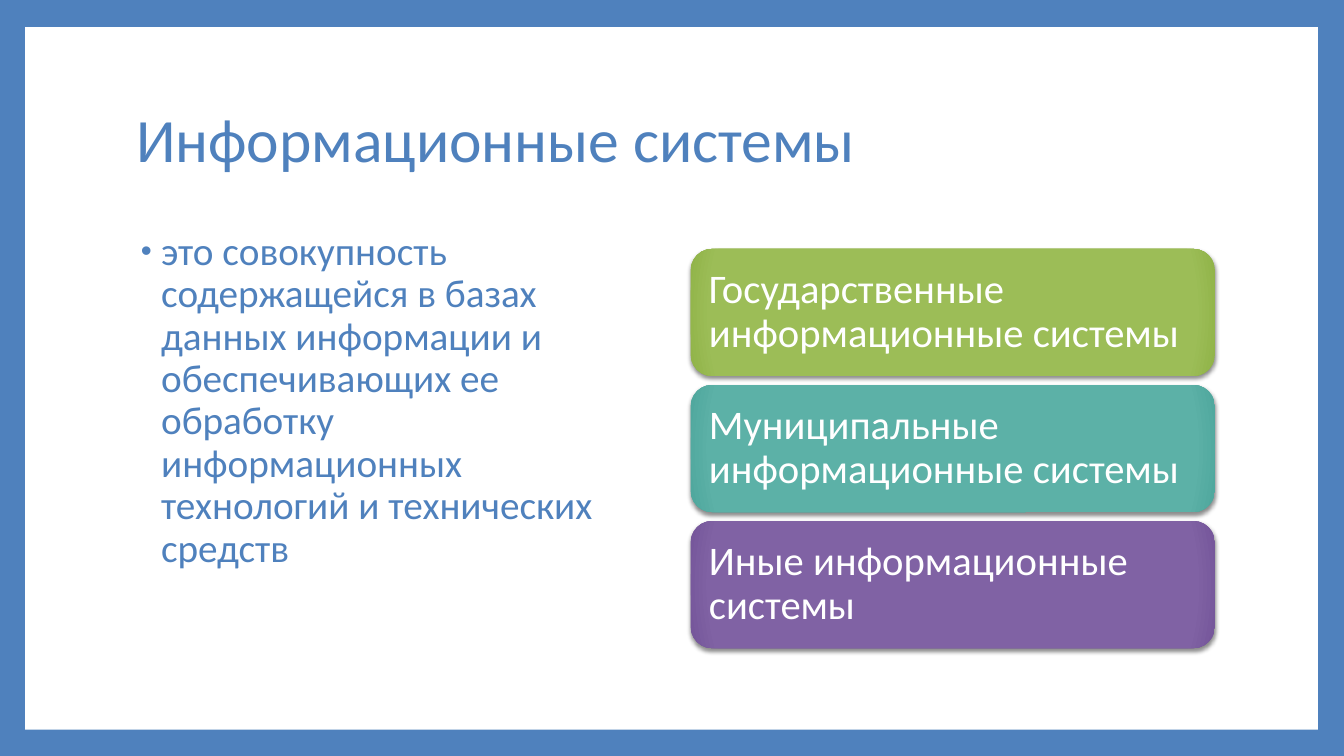
from lxml import etree
from pptx import Presentation
from pptx.dml.color import RGBColor
from pptx.enum.shapes import MSO_SHAPE
from pptx.enum.text import MSO_ANCHOR, PP_ALIGN
from pptx.oxml import parse_xml
from pptx.oxml.ns import nsdecls, qn
from pptx.util import Inches, Pt

RECTANGLE = MSO_SHAPE.RECTANGLE
ROUNDED = MSO_SHAPE.ROUNDED_RECTANGLE
MIDDLE, TOP = MSO_ANCHOR.MIDDLE, MSO_ANCHOR.TOP
LEFT = PP_ALIGN.LEFT

COLORS = {"blue": "4F81BD", "white": "FFFFFF", "shadow": "000000"}
FONT = "Calibri"

TITLE = "Информационные системы"
DEFINITION = (
    "это совокупность содержащейся в базах данных информации и обеспечивающих "
    "ее обработку информационных технологий и технических средств"
)
# Label, then gradient colours at 0, 90 and 100 percent
SYSTEM_TYPES = [
    ("Государственные информационные системы", ("9BBB59", "9CBD57", "90B348")),
    ("Муниципальные информационные системы", ("5EAFA6", "5CB1A7", "4EA69C")),
    ("Иные информационные системы", ("8064A2", "8062A4", "745599")),
]
GRADIENT_STOPS = (0, 90, 100)

CARD_LEFT, CARD_TOP = 6.85, 2.47
CARD_WIDTH, CARD_HEIGHT = 5.2, 1.26
CARD_STEP = 1.35


def write(shape, text, size, color, anchor=MIDDLE, before=0, inset=(0.1, 0.05)):
    frame = shape.text_frame
    frame.word_wrap = True
    frame.vertical_anchor = anchor
    frame.margin_left = frame.margin_right = Inches(inset[0])
    frame.margin_top = frame.margin_bottom = Inches(inset[1])
    para = frame.paragraphs[0]
    para.alignment = LEFT
    para.line_spacing = 0.9
    para.space_before = Pt(before)
    span = para.add_run()
    span.text = text
    span.font.name = FONT
    span.font.size = Pt(size)
    span.font.color.rgb = RGBColor.from_string(COLORS[color])
    return para


def add_bullet(para):
    properties = para._p.get_or_add_pPr()
    properties.set("marL", str(Inches(0.25)))
    properties.set("indent", str(Inches(-0.2)))
    color = etree.SubElement(properties, qn("a:buClr"))
    etree.SubElement(color, qn("a:srgbClr"), val=COLORS["blue"])
    etree.SubElement(properties, qn("a:buSzPct"), val="80000")
    etree.SubElement(properties, qn("a:buFont"), typeface="Arial")
    etree.SubElement(properties, qn("a:buChar"), char="•")


def style_card(card, colors):
    """Give the card a circular gradient, no outline and a soft drop shadow."""
    card.line.fill.background()
    stops = "".join(
        f'<a:gs pos="{stop * 1000}"><a:srgbClr val="{color}"/></a:gs>'
        for stop, color in zip(GRADIENT_STOPS, colors)
    )
    gradient = parse_xml(
        f'<a:gradFill {nsdecls("a")} rotWithShape="1"><a:gsLst>{stops}</a:gsLst>'
        '<a:path path="circle"><a:fillToRect l="100000" t="100000" '
        'r="100000" b="100000"/></a:path></a:gradFill>'
    )
    shadow = parse_xml(
        f'<a:effectLst {nsdecls("a")}><a:outerShdw blurRad="{Pt(3)}" '
        f'dist="{Pt(2)}" dir="5400000" rotWithShape="0">'
        f'<a:srgbClr val="{COLORS["shadow"]}"><a:alpha val="45000"/></a:srgbClr>'
        "</a:outerShdw></a:effectLst>"
    )
    properties = card._element.spPr
    properties.find(qn("a:prstGeom")).addnext(gradient)
    properties.append(shadow)


def main():
    deck = Presentation()
    deck.slide_width, deck.slide_height = Inches(13.33), Inches(7.5)
    slide = deck.slides.add_slide(deck.slide_layouts[5])
    background = slide.background.fill
    background.solid()
    background.fore_color.rgb = RGBColor.from_string(COLORS["blue"])

    title = slide.shapes.title
    title.left, title.top = Inches(1.25), Inches(0.67)
    title.width, title.height = Inches(10.8), Inches(1.48)
    write(title, TITLE, 44, "blue")

    panel = slide.shapes.add_shape(
        RECTANGLE, Inches(0.25), Inches(0.27), Inches(12.82), Inches(6.97)
    )
    panel.shadow.inherit = False
    panel.fill.solid()
    panel.fill.fore_color.rgb = RGBColor.from_string(COLORS["white"])
    panel.line.fill.background()
    title._element.addprevious(panel._element)

    definition = slide.shapes.add_textbox(
        Inches(1.25), Inches(2.25), Inches(5.2), Inches(4.4)
    )
    add_bullet(write(definition, DEFINITION, 28, "blue", anchor=TOP, before=14))

    for index, (label, colors) in enumerate(SYSTEM_TYPES):
        card = slide.shapes.add_shape(
            ROUNDED, Inches(CARD_LEFT), Inches(CARD_TOP + index * CARD_STEP),
            Inches(CARD_WIDTH), Inches(CARD_HEIGHT)
        )
        style_card(card, colors)
        write(card, label, 29, "white", inset=(0.12, 0.12))

    deck.save("out.pptx")


if __name__ == "__main__":
    main()
